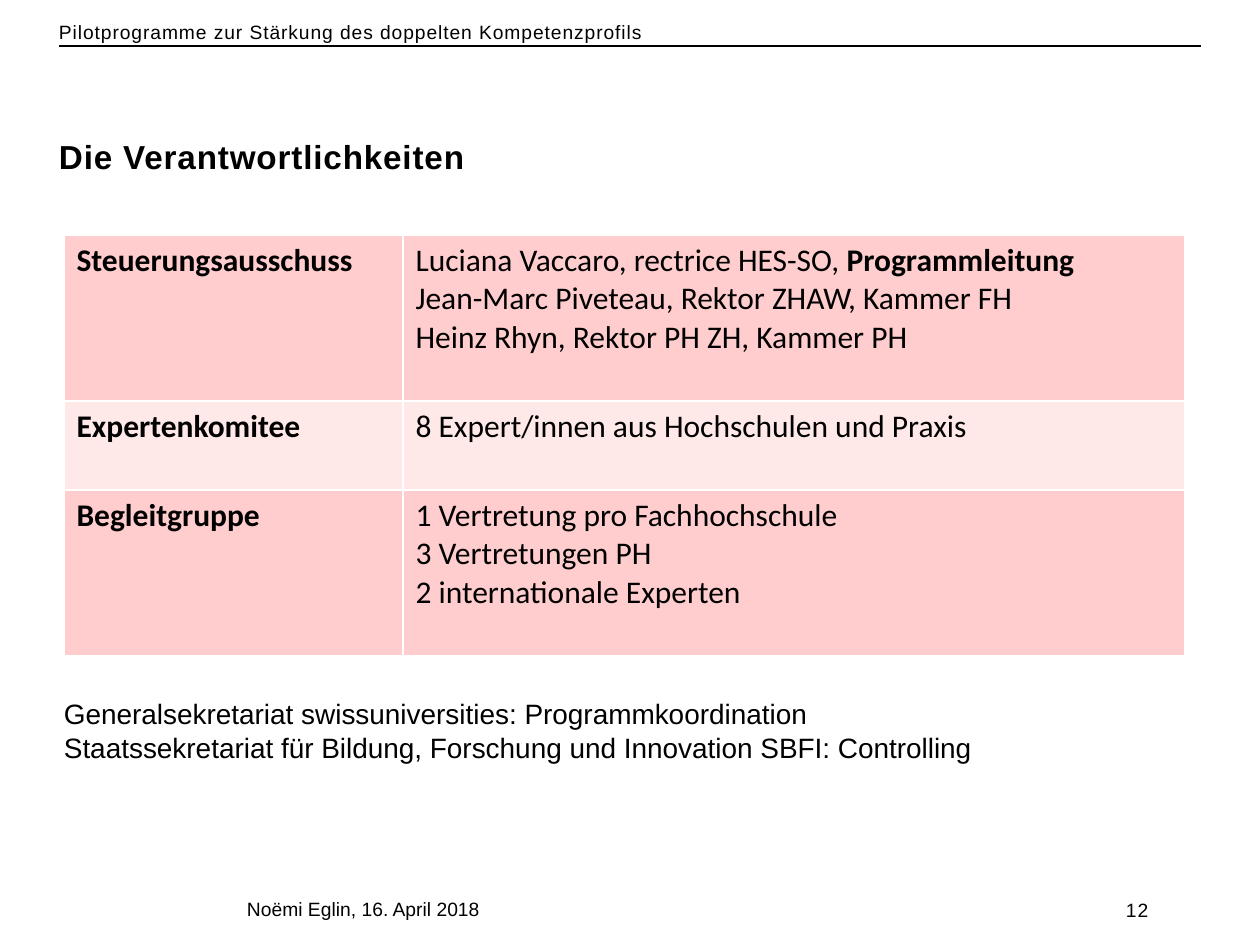
"""Build the slide on responsibilities with its table of committees."""
import lxml.etree
import pptx
import pptx.dml.color
import pptx.enum.shapes
import pptx.enum.text
import pptx.oxml.ns
import pptx.util

SCALE = 914400 / 126
COLORS = {"text": "000000", "border": "FFFFFF", "dark": "FFCDCD", "light": "FFE8E8"}
rgb = pptx.dml.color.RGBColor.from_string
qn = pptx.oxml.ns.qn


def px(*lengths):
    return [pptx.util.Emu(round(length * SCALE)) for length in lengths]


def write(frame, lines, font, leading=None, tracking=None):
    frame.word_wrap = True
    frame.vertical_anchor = pptx.enum.text.MSO_ANCHOR.TOP
    for index, line in enumerate(lines):
        para = frame.add_paragraph() if index else frame.paragraphs[0]
        para.alignment = pptx.enum.text.PP_ALIGN.LEFT
        if leading:
            para.line_spacing = pptx.util.Pt(leading)
        for text, bold in line:
            span = para.add_run()
            span.text = text
            for name, value in {**font, "bold": bold}.items():
                setattr(span.font, name, value)
            span.font.color.rgb = rgb(COLORS["text"])
            if tracking:
                span._r.get_or_add_rPr().set("spc", str(tracking))


deck = pptx.Presentation()
deck.slide_width, deck.slide_height = px(1260, 945)
page = deck.slides.add_slide(deck.slide_layouts[5])

small = {"name": "Arial", "size": pptx.util.Pt(11)}
heading = {"name": "Arial", "size": pptx.util.Pt(19)}
note = {"name": "Arial", "size": pptx.util.Pt(16)}
cell_font = {"name": "Calibri", "size": pptx.util.Pt(18)}

rule = page.shapes.add_connector(
    pptx.enum.shapes.MSO_CONNECTOR.STRAIGHT, *px(59, 46, 1201, 46))
rule.line.color.rgb = rgb(COLORS["text"])
rule.line.width = pptx.util.Pt(0.6)
lxml.etree.SubElement(rule._element.spPr, qn("a:effectLst"))

title = page.shapes.title
title.left, title.top, title.width, title.height = px(59, 136, 1142, 53)

texts = [
    (title, [[("Die Verantwortlichkeiten", True)]], heading, 22.8, 50),
    ((59, 20, 1142, 47),
     [[("Pilotprogramme zur Stärkung des doppelten Kompetenzprofils", False)]],
     small, 13.2, 50),
    ((247, 897, 641, 28), [[("Noëmi Eglin, 16. April 2018", False)]], small, None, None),
    ((1126, 898, 74, 25), [[("12", False)]], small, 13.2, 50),
    ((64, 697, 1121, 68),
     [[("Generalsekretariat swissuniversities: Programmkoordination", False)],
      [("Staatssekretariat für Bildung, Forschung und Innovation SBFI: Controlling", False)]],
     note, None, None),
]
for place, lines, font, leading, tracking in texts:
    box = place if place is title else page.shapes.add_textbox(*px(*place))
    frame = box.text_frame
    frame.auto_size = pptx.enum.text.MSO_AUTO_SIZE.NONE
    for side in ("left", "top", "right", "bottom"):
        setattr(frame, f"margin_{side}", 0)
    write(frame, lines, font, leading, tracking)

rows = [
    ("Steuerungsausschuss", 166, "dark",
     [[("Luciana Vaccaro, rectrice HES-SO, ", False), ("Programmleitung", True)],
      [("Jean-Marc Piveteau, Rektor ZHAW, Kammer FH", False)],
      [("Heinz Rhyn, Rektor PH ZH, Kammer PH", False)]]),
    ("Expertenkomitee", 89, "light",
     [[("8 Expert/innen aus Hochschulen und Praxis", False)]]),
    ("Begleitgruppe", 166, "dark",
     [[("1 Vertretung pro Fachhochschule", False)],
      [("3 Vertretungen PH", False)],
      [("2 internationale Experten", False)]]),
]
table = page.shapes.add_table(len(rows), 2, *px(64, 235, 1121, 421)).table
table.first_row = table.horz_banding = False
for column, width in zip(table.columns, px(339, 782)):
    column.width = width
for row_index, (group, height, shade, members) in enumerate(rows):
    table.rows[row_index].height = px(height)[0]
    for column_index, lines in enumerate(([[(group, True)]], members)):
        cell = table.cell(row_index, column_index)
        write(cell.text_frame, lines, cell_font)
        cell.vertical_anchor = pptx.enum.text.MSO_ANCHOR.TOP
        properties = cell._tc.get_or_add_tcPr()
        for edge in ("lnL", "lnR", "lnT", "lnB"):
            border = lxml.etree.SubElement(properties, qn(f"a:{edge}"), w="12700")
            fill = lxml.etree.SubElement(border, qn("a:solidFill"))
            lxml.etree.SubElement(fill, qn("a:srgbClr"), val=COLORS["border"])
        cell.fill.solid()
        cell.fill.fore_color.rgb = rgb(COLORS[shade])

deck.save("out.pptx")
